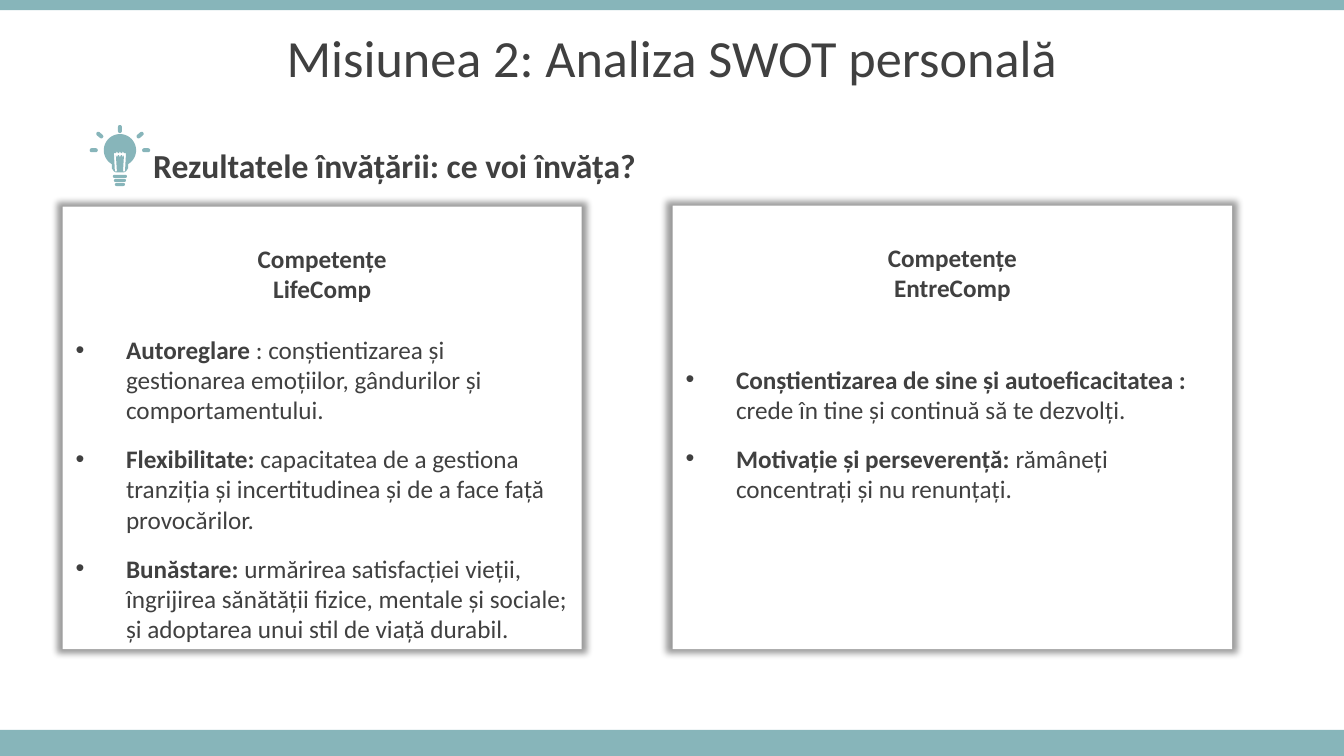
from math import cos, radians, sin

from lxml.etree import SubElement
from pptx import Presentation
from pptx.dml.color import RGBColor
from pptx.enum.shapes import MSO_SHAPE as Shape
from pptx.enum.text import MSO_ANCHOR as Anchor, PP_ALIGN as Align
from pptx.oxml.ns import qn
from pptx.util import Inches, Pt

COLORS = {"teal": "87B5BA", "text": "404040", "white": "FFFFFF", "shadow": "000000"}
FONT = "Calibri"
WIDTH, HEIGHT = 13.33, 7.5

LIFE_SKILLS = [
    ("Autoreglare ", ": conștientizarea și gestionarea emoțiilor, gândurilor și "
                     "comportamentului."),
    ("Flexibilitate: ", "capacitatea de a gestiona tranziția și incertitudinea și de a "
                        "face față provocărilor."),
    ("Bunăstare: ", "urmărirea satisfacției vieții, îngrijirea sănătății fizice, mentale "
                    "și sociale; și adoptarea unui stil de viață durabil."),
]
ENTRE_SKILLS = [
    ("Conștientizarea de sine și autoeficacitatea : ",
     "crede în tine și continuă să te dezvolți."),
    ("Motivație și perseverență: ", "rămâneți concentrați și nu renunțați."),
]


def color(name):
    return RGBColor.from_string(COLORS[name])


def add_span(para, text, size, bold=False):
    span = para.add_run()
    span.text = text
    span.font.name, span.font.size, span.font.bold = FONT, Pt(size), bold
    span.font.color.rgb = color("text")


def paint(shape, fill):
    shape.shadow.inherit = False
    shape.fill.solid()
    shape.fill.fore_color.rgb = color(fill)
    shape.line.fill.background()


def add_block(page, left, top, width, height, fill):
    block = page.shapes.add_shape(
        Shape.RECTANGLE, Inches(left), Inches(top), Inches(width), Inches(height))
    paint(block, fill)
    return block


def add_glow(shape):
    """Soft even shadow on all sides."""
    effects = shape.shadow._element.find(qn("a:effectLst"))
    outer = SubElement(effects, qn("a:outerShdw"), blurRad=str(Pt(5)), sx="102000",
                       sy="102000", algn="ctr", rotWithShape="0")
    tint = SubElement(outer, qn("a:srgbClr"), val=COLORS["shadow"])
    SubElement(tint, qn("a:alpha"), val="40000")


def add_bullet(para):
    props = para._p.get_or_add_pPr()
    props.set("marL", str(Inches(0.5)))
    props.set("indent", str(Inches(-0.5)))
    SubElement(props, qn("a:buFont"), typeface="Arial")
    SubElement(props, qn("a:buChar"), char="•")


def add_heading(page, left, top, width, height, text, size, bold, before):
    box = page.shapes.add_textbox(
        Inches(left), Inches(top), Inches(width), Inches(height))
    frame = box.text_frame
    frame.word_wrap = True
    frame.vertical_anchor = Anchor.MIDDLE
    para = frame.paragraphs[0]
    para.space_before = Pt(before)
    add_span(para, text, size, bold)
    return para


def arc(center_x, center_y, radius, start, stop, step):
    return [(center_x + radius * cos(radians(a)), center_y + radius * sin(radians(a)))
            for a in range(start, stop + 1, step)]


def pill(center_x, center_y, length, thickness, angle=0):
    """Outline of a bar with round ends, turned by the angle."""
    radius = thickness / 2
    reach = length / 2 - radius
    ends = arc(reach, 0, radius, -90, 90, 30) + arc(-reach, 0, radius, 90, 270, 30)
    c, s = cos(radians(angle)), sin(radians(angle))
    return [(center_x + x * c - y * s, center_y + x * s + y * c) for x, y in ends]


def add_bulb(page, left, top):
    center_x, center_y = left + 0.31, top + 0.25

    # Rays and screw base
    rays = [(-0.26, 0, 0), (-0.2, -0.15, 40), (0, -0.21, 90), (0.2, -0.15, -40),
            (0.26, 0, 0)]
    contours = [pill(x, y, 0.08, 0.04, angle) for x, y, angle in rays]
    contours += [pill(0, 0.26 + 0.04 * row, 0.14 - 0.02 * row, 0.03) for row in range(3)]

    # Glass and neck
    neck = [(0.08, 0.15), (0.08, 0.18), (0.06, 0.21), (0.04, 0.22),
            (-0.04, 0.22), (-0.06, 0.21), (-0.08, 0.18), (-0.08, 0.15)]
    contours.append(arc(0, 0, 0.16, 120, 420, 6) + neck)

    # Filament, cut out of the glass
    half = [(0, 0.01), (0.01, 0.03), (0.02, 0.03), (0.03, 0.01), (0.04, 0.03),
            (0.06, 0.03), (0.05, 0.21), (0.03, 0.21), (0.04, 0.05), (0.03, 0.07),
            (0.02, 0.05), (0.01, 0.05), (0, 0.07)]
    contours.append(half + [(-x, y) for x, y in reversed(half[1:-1])])

    placed = [[(Inches(center_x + x), Inches(center_y + y)) for x, y in contour]
              for contour in contours]
    builder = page.shapes.build_freeform(*placed[0][0])
    for index, (first, *rest) in enumerate(placed):
        if index:
            builder.move_to(*first)
        builder.add_line_segments(rest, close=True)
    paint(builder.convert_to_shape(), "teal")


def add_card(page, left, top, width, height, name, skills, gap):
    card = add_block(page, left, top, width, height, "white")
    add_glow(card)
    frame = card.text_frame
    frame.word_wrap = True
    frame.vertical_anchor = Anchor.TOP
    frame.margin_left = frame.margin_right = Inches(0.13)
    frame.margin_top, frame.margin_bottom = Inches(0.36), Inches(0.07)

    # Card title
    frame.text = f"Competențe\n{name}"
    for para in frame.paragraphs:
        para.alignment = Align.CENTER
        span = para.runs[0]
        span.font.name, span.font.size, span.font.bold = FONT, Pt(18), True
        span.font.color.rgb = color("text")

    # Skills
    for index, (term, meaning) in enumerate(skills):
        para = frame.add_paragraph()
        para.alignment = Align.LEFT
        para.space_before = Pt(0 if index else gap)
        para.space_after = Pt(13.3)
        add_bullet(para)
        add_span(para, term, 18, True)
        add_span(para, meaning, 18)


def build_mission(page):
    # Bands
    add_block(page, 0, 7.24, WIDTH, 0.26, "teal")
    add_block(page, 0, 0, WIDTH, 0.1, "teal")

    # Headings
    title = add_heading(page, 0, 0.18, WIDTH, 0.84,
                        "Misiunea 2: Analiza SWOT personală", 37.3, False, 10)
    title.alignment = Align.CENTER
    title.line_spacing = 0.9
    add_bulb(page, 0.88, 1.24)
    add_heading(page, 1.42, 1.43, 6.51, 0.41,
                "Rezultatele învățării: ce voi învăța?", 24, True, 4.8)

    # Competence cards
    add_card(page, 0.62, 2.05, 5.15, 4.39, "LifeComp", LIFE_SKILLS, 22)
    add_card(page, 6.67, 2.04, 5.55, 4.4, "EntreComp", ENTRE_SKILLS, 44)


def main():
    deck = Presentation()
    deck.slide_width, deck.slide_height = Inches(WIDTH), Inches(HEIGHT)
    build_mission(deck.slides.add_slide(deck.slide_layouts[6]))
    deck.save("out.pptx")


if __name__ == "__main__":
    main()
